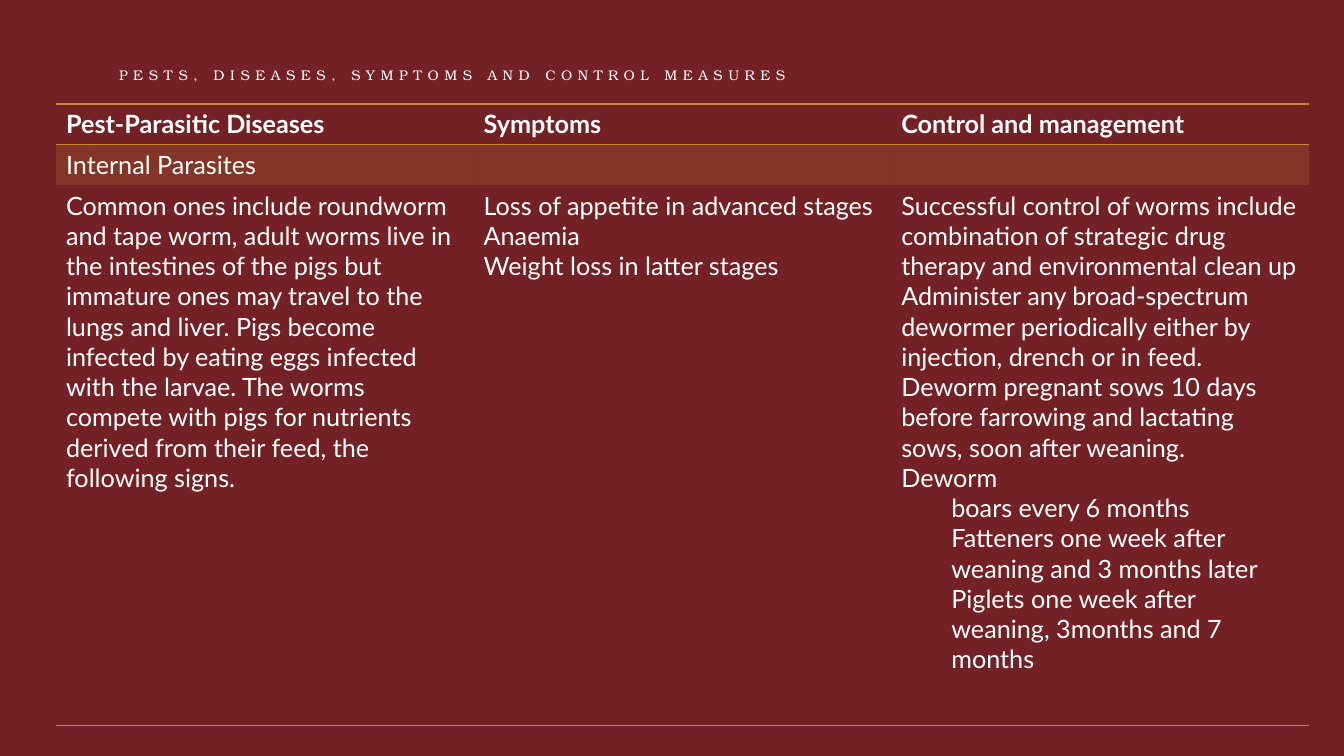
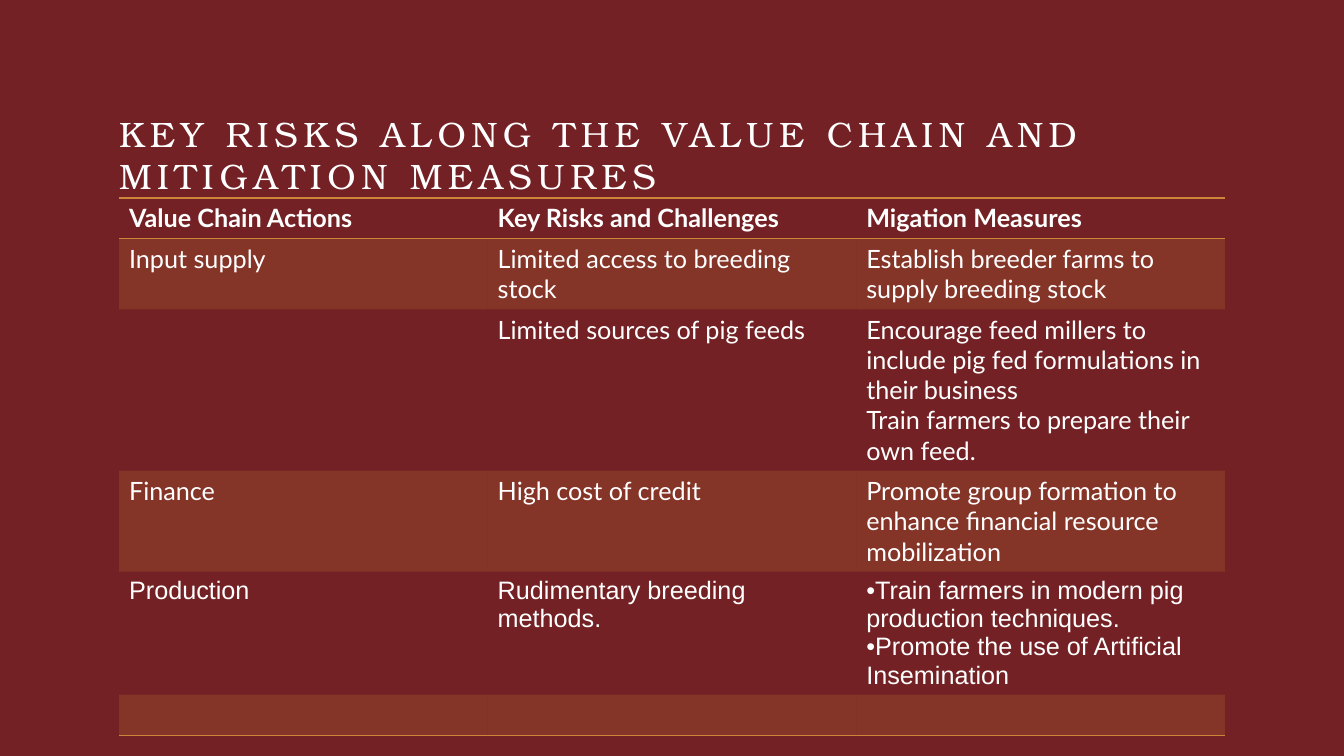
"""Build two table slides on pig health and value chain risks."""
import dataclasses
import typing

import lxml.etree
import pptx
import pptx.dml.color
import pptx.enum.text
import pptx.oxml.ns
import pptx.util


@dataclasses.dataclass(frozen=True)
class Theme:
    background: str = "732124"
    accent: str = "CE8439"
    text: str = "FFFFFF"
    band_alpha: int = 20000
    title_font: str = "TeX Gyre Bonum"
    body_font: str = "Lato"
    plain_font: str = "Arial"
    body_size: float = 18
    small_title: float = 10
    large_title: float = 25.2
    title_spacing: int = 400
    rule_width: float = 1


class Line(typing.NamedTuple):
    text: str
    indent: int = 0
    bullet: str = ""


class Row(typing.NamedTuple):
    height: int
    cells: list
    font: str = Theme.body_font


class Slides:
    SCALE = 12192000 / 1344

    def __init__(self, theme):
        self.theme = theme
        self.deck = pptx.Presentation()
        self.deck.slide_width = self.px(1344)
        self.deck.slide_height = self.px(756)
        self.page = None
        fill = self.deck.slide_master.background.fill
        fill.solid()
        fill.fore_color.rgb = self.color(theme.background)

    def px(self, length):
        return pptx.util.Emu(round(length * self.SCALE))

    def color(self, value):
        return pptx.dml.color.RGBColor.from_string(value)

    def child(self, parent, tag, **attributes):
        return lxml.etree.SubElement(parent, pptx.oxml.ns.qn(tag), attributes)

    def add_page(self):
        self.page = self.deck.slides.add_slide(self.deck.slide_layouts[5])

    def add_span(self, para, text, font, size, bold=False):
        span = para.add_run()
        span.text = text
        span.font.name = font
        span.font.size = pptx.util.Pt(size)
        span.font.bold = bold
        span.font.color.rgb = self.color(self.theme.text)
        return span

    def add_title(self, text, top, height, size):
        box = self.page.shapes.title
        box.left, box.top = self.px(119), self.px(top)
        box.width, box.height = self.px(1106), self.px(height)
        frame = box.text_frame
        frame.margin_left = frame.margin_right = 0
        frame.margin_top = frame.margin_bottom = 0
        frame.word_wrap = True
        frame.auto_size = pptx.enum.text.MSO_AUTO_SIZE.NONE
        frame.vertical_anchor = pptx.enum.text.MSO_ANCHOR.TOP
        para = frame.paragraphs[0]
        para.alignment = pptx.enum.text.PP_ALIGN.LEFT
        span = self.add_span(para, text, self.theme.title_font, size)
        span._r.get_or_add_rPr().set("spc", str(self.theme.title_spacing))

    def add_table(self, left, top, width, rows):
        height = sum(row.height for row in rows)
        columns = len(rows[0].cells)
        table = self.page.shapes.add_table(
            len(rows), columns, self.px(left), self.px(top),
            self.px(width), self.px(height)).table
        table.horz_banding = False
        for index, row in enumerate(rows):
            table.rows[index].height = self.px(row.height)
            ruled = {"a:lnT": index < 2,
                     "a:lnB": index in (0, len(rows) - 1)}
            for column, content in enumerate(row.cells):
                cell = table.cell(index, column)
                self.add_borders(cell, ruled)
                self.fill_cell(cell, banded=index % 2 == 1)
                self.write_cell(cell, content, row.font, bold=index == 0)

    def add_borders(self, cell, ruled):
        properties = cell._tc.get_or_add_tcPr()
        width = str(pptx.util.Pt(self.theme.rule_width))
        for side in ("a:lnL", "a:lnR", "a:lnT", "a:lnB"):
            border = self.child(properties, side, w=width)
            if ruled.get(side):
                fill = self.child(border, "a:solidFill")
                self.child(fill, "a:srgbClr", val=self.theme.accent)
            else:
                self.child(border, "a:noFill")

    def fill_cell(self, cell, banded):
        if not banded:
            cell.fill.background()
            return
        cell.fill.solid()
        cell.fill.fore_color.rgb = self.color(self.theme.accent)
        tint = cell._tc.tcPr.find(
            pptx.oxml.ns.qn("a:solidFill")).find(pptx.oxml.ns.qn("a:srgbClr"))
        self.child(tint, "a:alpha", val=str(self.theme.band_alpha))

    def write_cell(self, cell, content, font, bold):
        lines = [content] if isinstance(content, str) else content
        frame = cell.text_frame
        for index, item in enumerate(lines):
            line = Line(item) if isinstance(item, str) else item
            para = frame.add_paragraph() if index else frame.paragraphs[0]
            properties = para._p.get_or_add_pPr()
            if line.indent:
                para.level = 1
                properties.set("marL", str(self.px(line.indent)))
                properties.set("indent", "0")
            if line.bullet:
                properties.set("marL", "0")
                properties.set("indent", "0")
                self.child(properties, "a:buFont", typeface=font)
                self.child(properties, "a:buChar", char=line.bullet)
            if line.text:
                self.add_span(para, line.text, font, self.theme.body_size, bold)


PARASITE_ROWS = [
    Row(40, ["Pest-Parasitic Diseases", "Symptoms", "Control and management"]),
    Row(40, ["Internal Parasites", "", ""]),
    Row(540, [
        "Common ones include roundworm and tape worm, adult worms live in "
        "the intestines of the pigs but immature ones may travel to the lungs "
        "and liver. Pigs become infected by eating eggs infected with the "
        "larvae. The worms compete with pigs for nutrients derived from "
        "their feed, the following signs.",
        ["Loss of appetite in advanced stages",
         "Anaemia",
         "Weight loss in latter stages"],
        ["Successful control of worms include combination of strategic drug "
         "therapy and environmental clean up",
         "Administer any broad-spectrum dewormer periodically either by "
         "injection, drench or in feed.",
         "Deworm pregnant sows 10 days before farrowing and lactating sows, "
         "soon after weaning.",
         "Deworm",
         Line("boars every 6 months", indent=50),
         Line("Fatteners one week after weaning and 3 months later", indent=50),
         Line("Piglets one week after weaning, 3months and 7 months",
              indent=50)],
    ]),
]

RISK_ROWS = [
    Row(40, ["Value Chain Actions", "Key Risks and Challenges",
             "Migation Measures"]),
    Row(71, ["Input supply", "Limited access to breeding stock",
             "Establish breeder farms to supply breeding stock"]),
    Row(161, ["", "Limited sources of pig feeds",
              ["Encourage feed millers to include pig fed formulations in "
               "their business",
               "Train farmers to prepare their own feed."]]),
    Row(101, ["Finance", "High cost of credit",
              "Promote group formation to enhance financial resource "
              "mobilization"]),
    Row(123, ["Production", "Rudimentary breeding methods.",
              [Line("Train farmers in modern pig production techniques.",
                    bullet="•"),
               Line("Promote the use of Artificial Insemination",
                    bullet="•")]],
        Theme.plain_font),
    Row(40, ["", "", ""]),
]


def main():
    theme = Theme()
    slides = Slides(theme)

    slides.add_page()
    slides.add_title("PESTS, DISEASES, SYMPTOMS AND CONTROL MEASURES",
                     67, 27, theme.small_title)
    slides.add_table(56, 104, 1253, PARASITE_ROWS)

    slides.add_page()
    slides.add_title("KEY RISKS ALONG THE VALUE CHAIN AND MITIGATION MEASURES",
                     112, 73, theme.large_title)
    slides.add_table(119, 198, 1106, RISK_ROWS)

    slides.deck.save("out.pptx")


if __name__ == "__main__":
    main()
